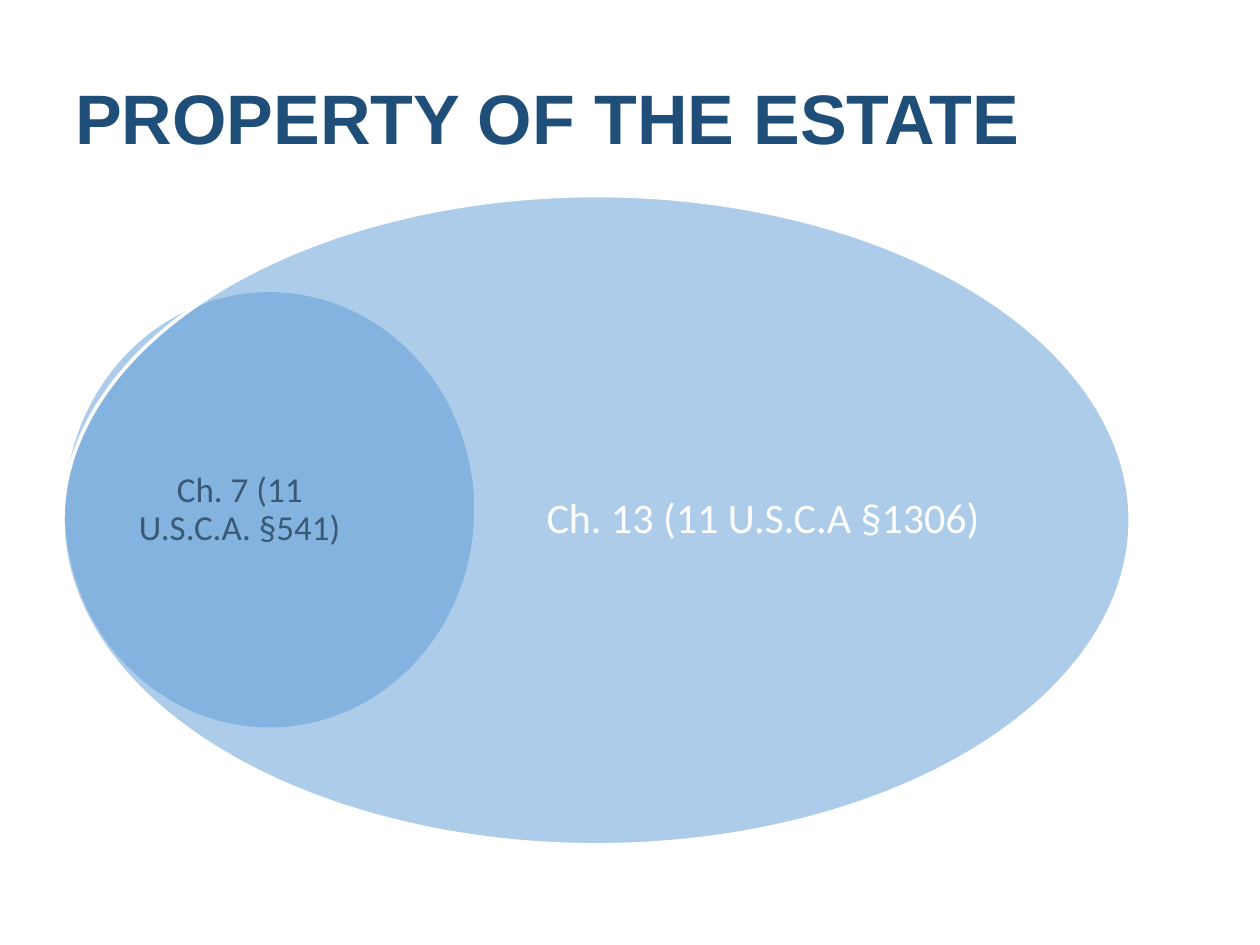
from lxml.etree import SubElement
from pptx import Presentation
from pptx.dml.color import RGBColor
from pptx.enum.shapes import MSO_SHAPE
from pptx.enum.text import MSO_ANCHOR, PP_ALIGN
from pptx.oxml.ns import qn
from pptx.util import Inches, Pt

COLORS = {"title": "1F4E79", "oval": "5B9BD5", "white": "FFFFFF", "dark": "181717"}
WIDTH, HEIGHT = Inches(10), Inches(7.5)


def rgb(name):
    """Return a palette colour."""
    return RGBColor.from_string(COLORS[name])


def share(box, part):
    """Return the part of a box given as shares of its left, top, width and height."""
    x, y, w, h = box
    px, py, pw, ph = part
    return int(x + px * w), int(y + py * h), int(pw * w), int(ph * h)


def add_text(slide, box, text, size, color, font, align, bold=False, inset=None, spacing=1.0):
    """Add a wrapped, vertically centred line of text."""
    tf = slide.shapes.add_textbox(*box).text_frame
    tf.word_wrap = True
    tf.vertical_anchor = MSO_ANCHOR.MIDDLE
    if inset is not None:
        tf.margin_left = tf.margin_right = tf.margin_top = tf.margin_bottom = inset
    tf.text = text
    p = tf.paragraphs[0]
    p.alignment = align
    p.line_spacing = spacing
    r = p.runs[0]
    r.font.name, r.font.size, r.font.bold = font, Pt(size), bold
    r.font.color.rgb = rgb(color)


def add_set(slide, box, label_part, text, size, color, align):
    """Add a half-transparent oval and its label."""
    sp = slide.shapes.add_shape(MSO_SHAPE.OVAL, *box)
    sp.shadow.inherit = False
    sp.fill.solid()
    sp.fill.fore_color.rgb = rgb("oval")
    fill = sp.fill._xPr.find(qn("a:solidFill"))
    SubElement(fill[0], qn("a:alpha")).set("val", "50000")
    sp.line.color.rgb = rgb("white")
    sp.line.width = Pt(2)
    add_text(slide, share(box, label_part), text, size, color, "Calibri", align,
             inset=0, spacing=0.9)


def add_title(slide, box):
    """Add the slide heading."""
    add_text(slide, box, "PROPERTY OF THE ESTATE", 40, "title", "Arial",
             PP_ALIGN.LEFT, bold=True)


def add_venn(slide, box):
    """Add the Chapter 7 oval inside the larger Chapter 13 oval."""
    inner = share(box, (0, 0.146, 0.387, 0.676))
    add_set(slide, inner, (0.14, 0.118, 0.576, 0.764),
            "Ch. 7 (11 U.S.C.A. §541)", 20, "dark", PP_ALIGN.CENTER)
    add_set(slide, box, (0.283, 0.118, 0.576, 0.764),
            "Ch. 13 (11 U.S.C.A §1306)", 24, "white", PP_ALIGN.RIGHT)


def main():
    """Build and save the slide."""
    prs = Presentation()
    prs.slide_width, prs.slide_height = WIDTH, HEIGHT
    slide = prs.slides.add_slide(prs.slide_layouts[6])
    page = (0, 0, WIDTH, HEIGHT)
    add_title(slide, share(page, (0.05, 0.04, 0.9, 0.167)))
    add_venn(slide, share(page, (0.05, 0.207, 0.847, 0.687)))
    prs.save("out.pptx")


if __name__ == "__main__":
    main()
